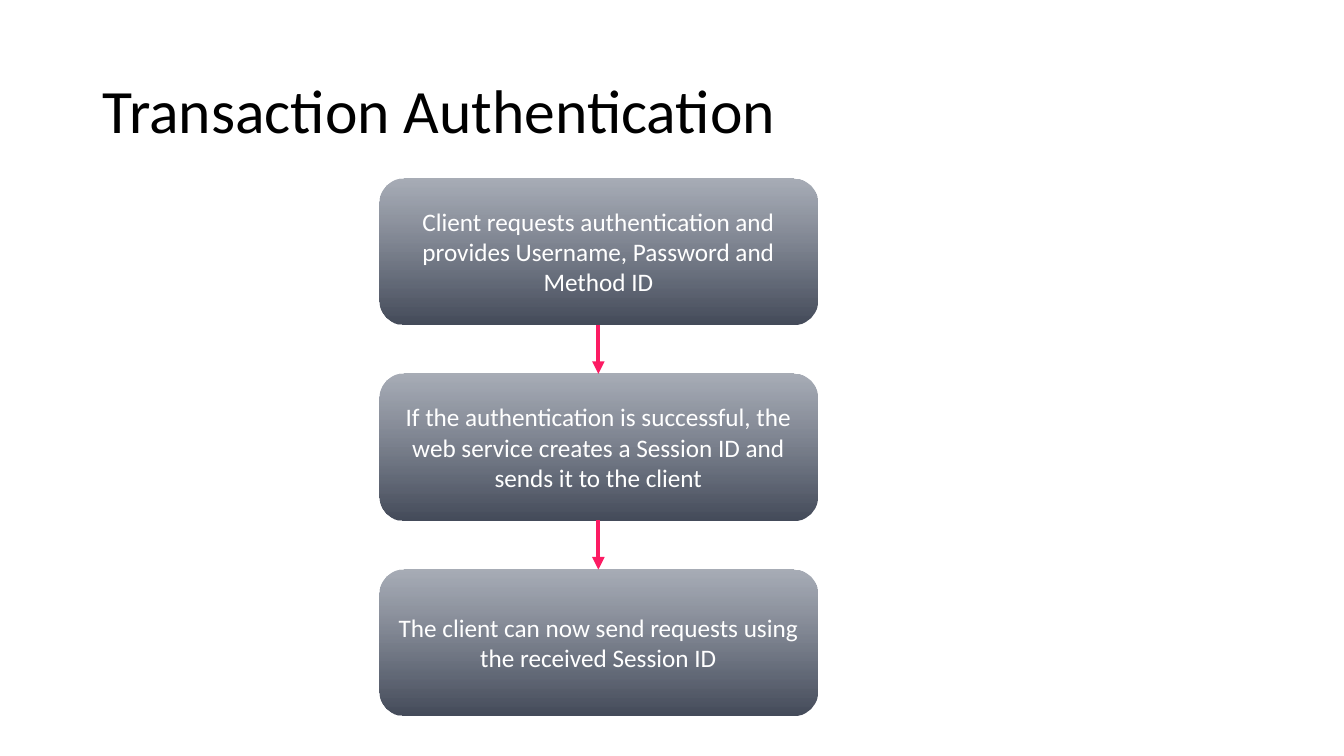
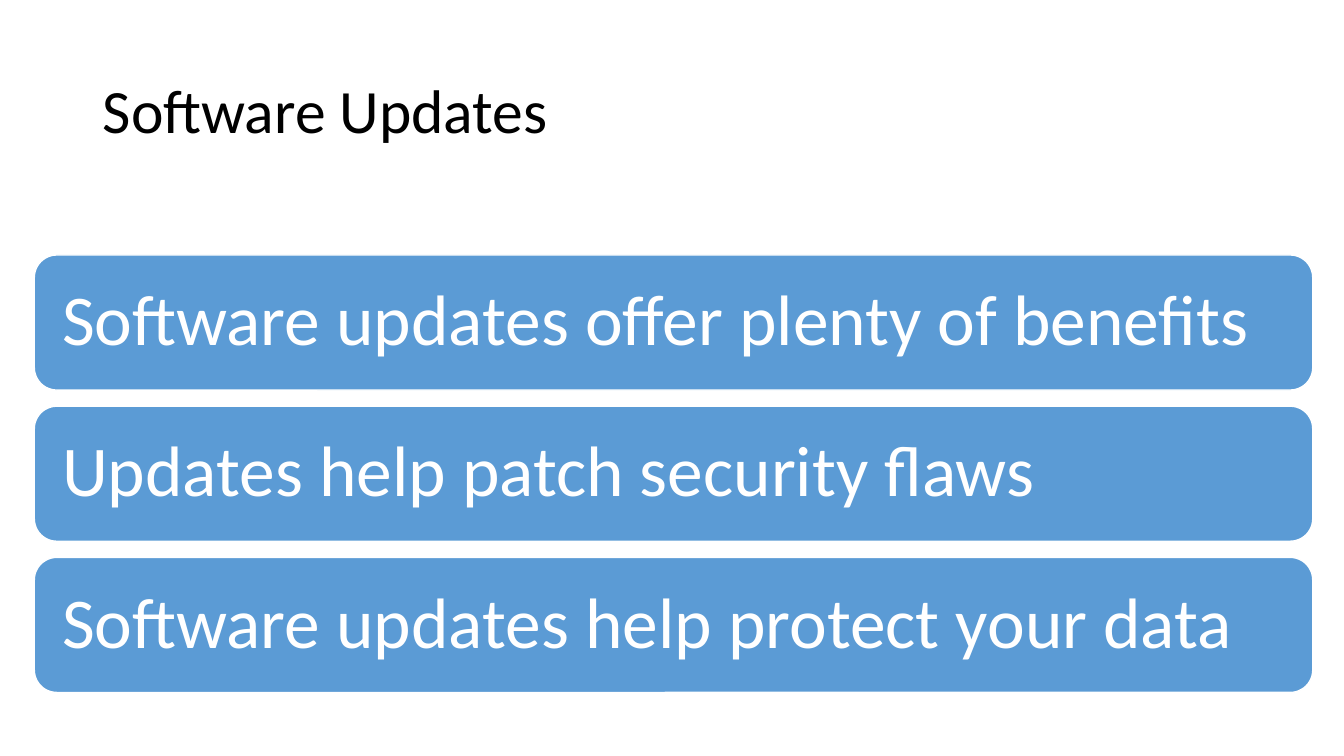
from pptx import Presentation
from pptx.dml.color import RGBColor
from pptx.enum.shapes import MSO_CONNECTOR, MSO_SHAPE
from pptx.enum.text import MSO_ANCHOR, MSO_AUTO_SIZE, PP_ALIGN
from pptx.oxml.ns import qn
from pptx.util import Pt
from lxml import etree

ROUND_RECT = MSO_SHAPE.ROUNDED_RECTANGLE
STRAIGHT = MSO_CONNECTOR.STRAIGHT
MIDDLE = MSO_ANCHOR.MIDDLE
NO_AUTOFIT = MSO_AUTO_SIZE.NONE
LEFT, CENTER = PP_ALIGN.LEFT, PP_ALIGN.CENTER

FONT = "Calibri"
BLACK = RGBColor(0x00, 0x00, 0x00)
WHITE = RGBColor(0xFF, 0xFF, 0xFF)
SLATE = RGBColor(0x60, 0x69, 0x7B)
DARK_SLATE = RGBColor(0x44, 0x4B, 0x5A)
PINK = RGBColor(0xFC, 0x1B, 0x63)
BLUE = RGBColor(0x5B, 0x9B, 0xD5)

AUTH_TITLE = "Transaction Authentication"
AUTH_STEPS = [
    "Client requests authentication and provides Username, Password and Method ID",
    "If the authentication is successful, the web service creates a Session ID and sends it to the client",
    "The client can now send requests using the received Session ID",
]
UPDATES_TITLE = "Software Updates"
UPDATE_POINTS = [
    "Software updates offer plenty of benefits",
    "Updates help patch security flaws",
    "Software updates help protect your data",
]

SLIDE_SIZE = (1333, 750)
TITLE_BOX = (92, 40, 1150, 145)
STEP_BOX, STEP_PITCH = (376, 177, 435, 145), 194
BAR_BOX, BAR_PITCH = (34, 253, 1268, 134), 150
BAR_INSET = 21


def px(n):
    return n * 9144


def write(tf, text, size, color, align, spacing=1.0):
    tf.word_wrap = True
    tf.auto_size = NO_AUTOFIT
    tf.vertical_anchor = MIDDLE
    p = tf.paragraphs[0]
    p.alignment = align
    p.line_spacing = spacing
    r = p.add_run()
    r.text = text
    r.font.name = FONT
    r.font.size = Pt(size)
    r.font.color.rgb = color


def add_titled_slide(prs, text):
    s = prs.slides.add_slide(prs.slide_layouts[5])
    title = s.shapes.title
    title.left, title.top, title.width, title.height = map(px, TITLE_BOX)
    write(title.text_frame, text, 44, BLACK, LEFT, 0.9)
    return s


def add_stack(s, count, box, pitch):
    x, y, w, h = box
    stack = []
    for i in range(count):
        sp = s.shapes.add_shape(ROUND_RECT, px(x), px(y + i * pitch), px(w), px(h))
        sp.shadow.inherit = False
        stack.append(sp)
    return stack


def fill_slate_gradient(sp):
    sp.fill.gradient()
    sp.fill.gradient_angle = 270
    for stop, color in zip(sp.fill.gradient_stops, (SLATE, DARK_SLATE)):
        stop.color.rgb = color
    first = next(sp._element.spPr.iter(qn("a:srgbClr")))
    etree.SubElement(first, qn("a:alpha")).set("val", "55000")


def add_arrow(s, upper, lower):
    arrow = s.shapes.add_connector(STRAIGHT, 0, 0, 0, 0)
    arrow.begin_connect(upper, 2)
    arrow.end_connect(lower, 0)
    arrow.line.color.rgb = PINK
    arrow.line.width = Pt(3)
    etree.SubElement(arrow.line._get_or_add_ln(), qn("a:tailEnd")).set("type", "triangle")
    etree.SubElement(arrow._element.spPr, qn("a:effectLst"))


def build_authentication(prs):
    s = add_titled_slide(prs, AUTH_TITLE)
    steps = add_stack(s, len(AUTH_STEPS), STEP_BOX, STEP_PITCH)
    for sp, text in zip(steps, AUTH_STEPS):
        fill_slate_gradient(sp)
        sp.line.fill.background()
        write(sp.text_frame, text, 18, WHITE, CENTER)
    for upper, lower in zip(steps, steps[1:]):
        add_arrow(s, upper, lower)


def build_updates(prs):
    s = add_titled_slide(prs, UPDATES_TITLE)
    bars = add_stack(s, len(UPDATE_POINTS), BAR_BOX, BAR_PITCH)
    for sp, text in zip(bars, UPDATE_POINTS):
        sp.fill.solid()
        sp.fill.fore_color.rgb = BLUE
        sp.line.color.rgb = WHITE
        sp.line.width = Pt(1)
        tf = sp.text_frame
        tf.margin_left = tf.margin_right = px(BAR_INSET)
        tf.margin_top = tf.margin_bottom = px(BAR_INSET)
        write(tf, text, 51, WHITE, LEFT, 0.9)


def main():
    prs = Presentation()
    prs.slide_width, prs.slide_height = map(px, SLIDE_SIZE)
    build_authentication(prs)
    build_updates(prs)
    prs.save("out.pptx")


if __name__ == "__main__":
    main()
